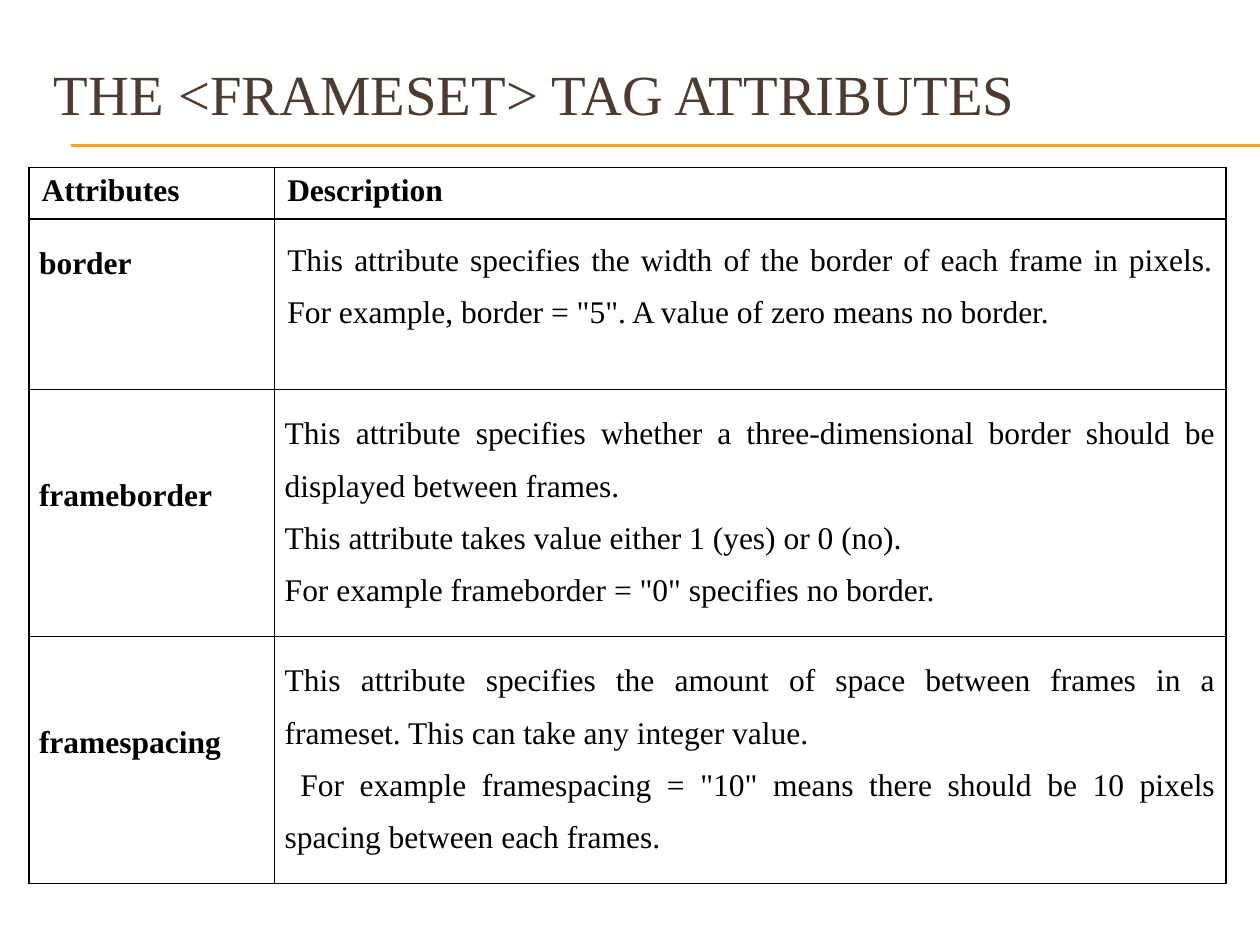
from lxml.etree import SubElement
from pptx import Presentation
from pptx.dml.color import RGBColor as RGB
from pptx.enum.text import MSO_ANCHOR as ANC, PP_ALIGN as AL
from pptx.oxml.ns import qn
from pptx.util import Inches, Pt

FONT = "Times New Roman"
COLORS = {"title": "4E3B30", "rule": "F0A22E", "text": "000000", "border": "000000"}
COLS = [1.95, 7.55]
ROWS = [0.41, 1.35, 1.83, 1.83]
HEADS = ["Attributes", "Description"]
ITEMS = [
    ("border", [
        'This attribute specifies the width of the border of each frame in pixels. '
        'For example, border = "5". A value of zero means no border.']),
    ("frameborder", [
        "This attribute specifies whether a three-dimensional border should be "
        "displayed between frames.",
        "This attribute takes value either 1 (yes) or 0 (no).",
        'For example frameborder = "0" specifies no border.']),
    ("framespacing", [
        "This attribute specifies the amount of space between frames in a frameset. "
        "This can take any integer value.",
        ' For example framespacing = "10" means there should be 10 pixels '
        "spacing between each frames."]),
]


def style(par, size, color, bold=False):
    for run in par.runs:
        font = run.font
        font.name, font.size, font.bold = FONT, Pt(size), bold
        font.color.rgb = RGB.from_string(COLORS[color])


def add_title(slide, text):
    box = slide.shapes.add_textbox(Inches(0.33), Inches(0.47), Inches(9.5), Inches(0.6))
    frame = box.text_frame
    frame.word_wrap = True
    frame.margin_top = 0
    frame.text = text
    style(frame.paragraphs[0], 32.4, "title")


def add_rule(slide, y):
    line = slide.shapes.add_connector(1, Inches(0.56), Inches(y), Inches(10), Inches(y))
    line.line.color.rgb = RGB.from_string(COLORS["rule"])
    line.line.width = Pt(0.75)
    SubElement(line._element.spPr, qn("a:effectLst"))


def add_edges(cell):
    props = cell._tc.get_or_add_tcPr()
    for side in ("lnL", "lnR", "lnT", "lnB"):
        edge = SubElement(props, qn(f"a:{side}"), w=str(Pt(1)))
        fill = SubElement(edge, qn("a:solidFill"))
        SubElement(fill, qn("a:srgbClr"), val=COLORS["border"])


def fill_cell(cell, lines, bold=False, body=True):
    add_edges(cell)
    cell.fill.background()
    frame = cell.text_frame
    frame.text = "\n".join(lines)
    for par in frame.paragraphs:
        if body:
            par.alignment, par.line_spacing = AL.JUSTIFY, 1.5
        style(par, 18, "text", bold)


def pad(cell, gap=0.08):
    cell.margin_left = cell.margin_right = Inches(gap)
    cell.margin_top = cell.margin_bottom = Inches(gap)


def add_grid(slide):
    shape = slide.shapes.add_table(len(ROWS), len(COLS), Inches(0.23), Inches(1.33),
                                   Inches(sum(COLS)), Inches(sum(ROWS)))
    table = shape.table
    table.first_row = table.horz_banding = False
    for col, width in zip(table.columns, COLS):
        col.width = Inches(width)
    for row, height in zip(table.rows, ROWS):
        row.height = Inches(height)

    # Header row
    for i, head in enumerate(HEADS):
        fill_cell(table.cell(0, i), [head], bold=True, body=False)

    # One row per attribute
    for i, (name, lines) in enumerate(ITEMS, 1):
        key, note = table.cell(i, 0), table.cell(i, 1)
        fill_cell(key, [name], bold=True)
        fill_cell(note, lines)
        pad(key)
        if i > 1:
            pad(note)
            # Names sit a little above the middle of the row
            key.vertical_anchor = ANC.MIDDLE
            key.margin_bottom = Inches(0.49)


def main():
    prs = Presentation()
    prs.slide_width, prs.slide_height = Inches(10), Inches(7.5)
    slide = prs.slides.add_slide(prs.slide_layouts[6])
    # Double rule under the title
    for y in (1.15, 1.16):
        add_rule(slide, y)
    add_title(slide, "THE <FRAMESET> TAG ATTRIBUTES")
    add_grid(slide)
    prs.save("out.pptx")


if __name__ == "__main__":
    main()
